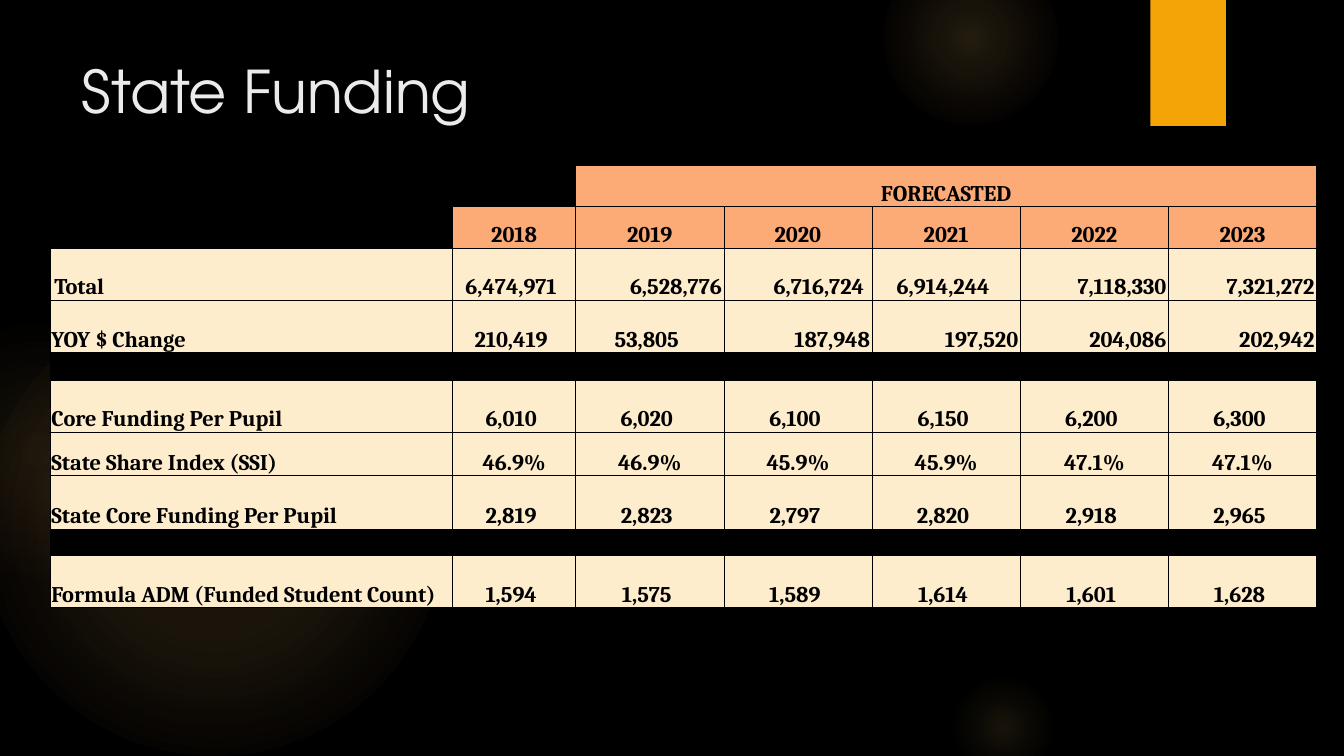
import pptx
import pptx.util
import pptx.dml.color
import pptx.enum.shapes
import pptx.enum.text
import pptx.oxml.ns
from lxml import etree

Inches = pptx.util.Inches
Pt = pptx.util.Pt
RGB = pptx.dml.color.RGBColor.from_string
qn = pptx.oxml.ns.qn
SHAPE = pptx.enum.shapes.MSO_SHAPE
ALIGN = pptx.enum.text.PP_ALIGN
ANCHOR = pptx.enum.text.MSO_ANCHOR

HUES = {
    "black": "000000", "title": "EBEBEB", "bar": "F5A408",
    "glow": "FAC96A", "rose": "F59B74", "head": "FCAB76", "cream": "FDEDCD",
}


def add_glow(spPr, stops):
    grad = etree.SubElement(spPr, qn("a:gradFill"), rotWithShape="1")
    stop_list = etree.SubElement(grad, qn("a:gsLst"))
    for pos, hue, alpha in stops:
        stop = etree.SubElement(stop_list, qn("a:gs"), pos=str(pos * 1000))
        color = etree.SubElement(stop, qn("a:srgbClr"), val=HUES[hue])
        etree.SubElement(color, qn("a:alpha"), val=str(alpha * 1000))
    focus = etree.SubElement(grad, qn("a:path"), path="circle")
    etree.SubElement(focus, qn("a:fillToRect"), l="50000", t="50000", r="50000", b="50000")


def add_edges(tcPr, hidden):
    for side in ("lnL", "lnR", "lnT", "lnB"):
        edge = etree.SubElement(tcPr, qn("a:" + side), w=str(Pt(0.5)))
        if side in hidden:
            etree.SubElement(edge, qn("a:noFill"))
        else:
            fill = etree.SubElement(edge, qn("a:solidFill"))
            etree.SubElement(fill, qn("a:srgbClr"), val=HUES["black"])


deck = pptx.Presentation()
deck.slide_width = Inches(13.33)
deck.slide_height = Inches(7.5)
slide = deck.slides.add_slide(deck.slide_layouts[5])
slide.background.fill.solid()
slide.background.fill.fore_color.rgb = RGB(HUES["black"])

glows = [
    (-0.17, 2.92, 4.58, [(0, "glow", 11), (36, "glow", 10), (75, "glow", 0)]),
    (-0.92, 3.17, 2.58, [(0, "glow", 8), (36, "glow", 5), (71, "rose", 0)]),
    (9.41, 1.83, 3.08, [(0, "glow", 7), (36, "glow", 6), (69, "glow", 0)]),
    (8.75, -0.5, 1.75, [(0, "glow", 14), (36, "glow", 7), (73, "glow", 0)]),
    (9.41, 6.67, 1.08, [(0, "glow", 10), (31, "glow", 5), (66, "glow", 0)]),
]
for left, top, size, stops in glows:
    orb = slide.shapes.add_shape(
        SHAPE.OVAL, Inches(left), Inches(top), Inches(size), Inches(size))
    add_glow(orb._element.spPr, stops)
    orb.line.fill.background()
    orb.shadow.inherit = False

bar = slide.shapes.add_shape(
    SHAPE.RECTANGLE, Inches(11.41), Inches(0), Inches(0.75), Inches(1.25))
bar.fill.solid()
bar.fill.fore_color.rgb = RGB(HUES["bar"])
bar.line.fill.background()
bar.shadow.inherit = False

title = slide.shapes.title
title.left, title.top = Inches(0.71), Inches(0.49)
title.width, title.height = Inches(10.29), Inches(1.53)
title.text_frame.text = "State Funding"
title.text_frame.vertical_anchor = ANCHOR.TOP
head = title.text_frame.paragraphs[0]
head.alignment = ALIGN.LEFT
font = head.runs[0].font
font.name, font.size = "TeX Gyre Adventor", Pt(42)
font.color.rgb = RGB(HUES["title"])

pairs = [(1, 2), (3, 4)]
rows = [
    (0.41, pairs, "cccccc", "", ["", "", "", "FORECASTED", "", ""]),
    (0.41, pairs, "cccccc", "", ["2018", "2019", "2020", "2021", "2022", "2023"]),
    (0.52, pairs, "nrsnrr", "Total",
     ["6,474,971", "6,528,776", "6,716,724", "6,914,244", "7,118,330", "7,321,272"]),
    (0.52, [(0, 2), (3, 4)], "nnrrrr", "YOY $ Change",
     ["210,419", "53,805", "187,948", "197,520", "204,086", "202,942"]),
    (0.27, pairs, "nnnnnn", "", [""] * 6),
    (0.52, [(0, 3)], "nnnnnn", "Core Funding Per Pupil",
     ["6,010", "6,020", "6,100", "6,150", "6,200", "6,300"]),
    (0.43, [(0, 3)], "cccccc", "State Share Index (SSI)",
     ["46.9%", "46.9%", "45.9%", "45.9%", "47.1%", "47.1%"]),
    (0.53, [(0, 4)], "nnnnnn", "State Core Funding Per Pupil",
     ["2,819", "2,823", "2,797", "2,820", "2,918", "2,965"]),
    (0.26, [(2, 4)], "nnnnnn", "", [""] * 6),
    (0.52, [(0, 4)], "nnnnnn", "Formula ADM (Funded Student Count)",
     ["1,594", "1,575", "1,589", "1,614", "1,601", "1,628"]),
]
places = {
    "l": (ALIGN.LEFT, 0.01, 0.01), "i": (ALIGN.LEFT, 0.04, 0.01),
    "c": (ALIGN.CENTER, 0.01, 0.01), "n": (ALIGN.CENTER, 0.01, 0.07),
    "r": (ALIGN.RIGHT, 0.01, 0.02), "s": (ALIGN.RIGHT, 0.01, 0.08),
}
widths = [0.68, 1.68, 0.63, 0.25, 0.75, 1.22] + [1.47] * 5

frame = slide.shapes.add_table(
    len(rows), len(widths), Inches(0.5), Inches(1.64),
    Inches(sum(widths)), Inches(sum(row[0] for row in rows)))
table = frame.table
table.first_row = False
table.horz_banding = False
for col, width in zip(table.columns, widths):
    col.width = Inches(width)

for r, (height, spans, codes, label, values) in enumerate(rows):
    table.rows[r].height = Inches(height)
    for first, last in spans:
        table.cell(r, first).merge(table.cell(r, last))
    texts = [label, "", "", "", ""] + values
    codes = ("i" if label == "Total" else "l") + "llll" + codes
    for c, (code, text) in enumerate(zip(codes, texts)):
        cell = table.cell(r, c)
        align, left, right = places[code]
        cell.margin_left, cell.margin_right = Inches(left), Inches(right)
        cell.margin_top, cell.margin_bottom = Inches(0.01), 0
        cell.vertical_anchor = ANCHOR.BOTTOM
        end = c + cell.span_width - 1 if cell.is_merge_origin else c
        hidden = []
        if 0 < c < 5 or r == 0 and c > 6:
            hidden.append("lnL")
        if end < 4 or r == 0 and 6 <= c < 10:
            hidden.append("lnR")
        add_edges(cell._tc.get_or_add_tcPr(), hidden)
        if r < 2 and c < 6 - r:
            cell.fill.background()
        else:
            hue = "head" if r < 2 else "cream" if any(texts) else "black"
            cell.fill.solid()
            cell.fill.fore_color.rgb = RGB(HUES[hue])
        para = cell.text_frame.paragraphs[0]
        para.alignment = align
        if text:
            para.text = text
            font = para.runs[0].font
            font.name, font.size, font.bold = "Cambria", Pt(16), True
            font.color.rgb = RGB(HUES["black"])
        else:
            etree.SubElement(para._p, qn("a:endParaRPr"), sz="1200")

deck.save("out.pptx")
